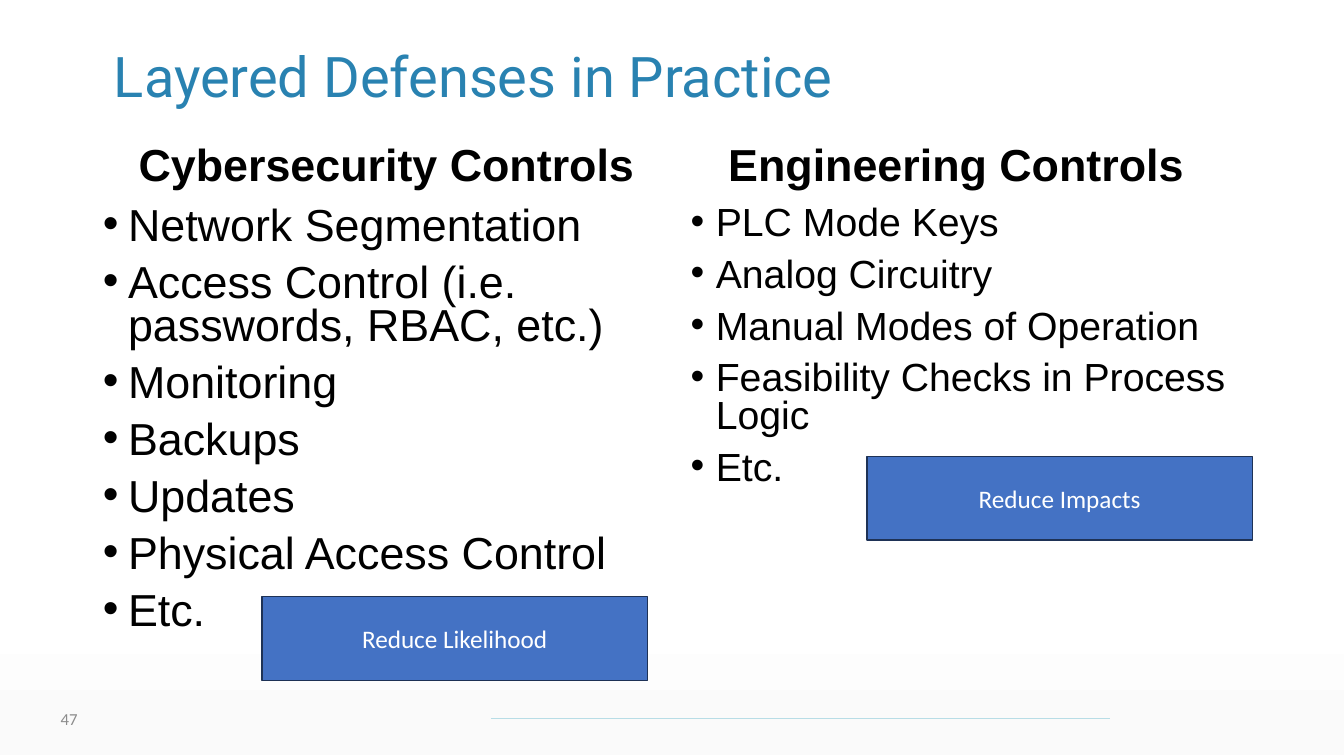
from dataclasses import dataclass

from lxml.etree import SubElement
from pptx import Presentation
from pptx.dml.color import RGBColor
from pptx.enum.shapes import MSO_CONNECTOR, MSO_SHAPE
from pptx.enum.text import MSO_ANCHOR, MSO_AUTO_SIZE, PP_ALIGN
from pptx.oxml.ns import qn
from pptx.slide import Slide
from pptx.text.text import TextFrame, _Paragraph as Paragraph
from pptx.util import Inches, Pt

BLACK = RGBColor(0x00, 0x00, 0x00)
WHITE = RGBColor(0xFF, 0xFF, 0xFF)
TEAL = RGBColor(0x29, 0x82, 0xB1)
PALE_TEAL = RGBColor(0xB8, 0xDD, 0xE6)
GRAY = RGBColor(0x8C, 0x8C, 0x8C)
BOX_BLUE = RGBColor(0x44, 0x72, 0xC4)
BOX_EDGE = RGBColor(0x1E, 0x32, 0x56)
PALE_GRAY = RGBColor(0xFA, 0xFA, 0xFA)

SLIDE_WIDTH, SLIDE_HEIGHT = 13.33, 7.5
COLUMN_WIDTH = 5.67


@dataclass(frozen=True)
class TextStyle:
    font: str
    size: float
    color: RGBColor
    bold: bool = False
    align: PP_ALIGN = PP_ALIGN.LEFT
    line_spacing: float = 1.0


@dataclass(frozen=True)
class ControlColumn:
    heading: str
    heading_left: float
    controls: tuple[str, ...]
    list_left: float
    list_size: float
    effect: str
    effect_left: float
    effect_top: float


TITLE_STYLE = TextStyle("Roboto", 40, TEAL, line_spacing=0.9)
HEADING_STYLE = TextStyle("Arial", 32, BLACK, True, PP_ALIGN.CENTER, 0.9)
EFFECT_STYLE = TextStyle("Calibri", 18, WHITE, align=PP_ALIGN.CENTER)
NUMBER_STYLE = TextStyle("Calibri", 12, GRAY, align=PP_ALIGN.RIGHT)

COLUMNS = (
    ControlColumn(
        "Cybersecurity Controls", 1.0,
        ("Network Segmentation", "Access Control (i.e. passwords, RBAC, etc.)",
         "Monitoring", "Backups", "Updates", "Physical Access Control", "Etc."),
        0.92, 32, "Reduce Likelihood", 2.6, 5.92),
    ControlColumn(
        "Engineering Controls", 6.65,
        ("PLC Mode Keys", "Analog Circuitry", "Manual Modes of Operation",
         "Feasibility Checks in Process Logic", "Etc."),
        6.75, 28, "Reduce Impacts", 8.6, 4.53),
)


def place(shape, left: float, top: float, width: float, height: float) -> None:
    shape.left, shape.top = Inches(left), Inches(top)
    shape.width, shape.height = Inches(width), Inches(height)


def style_paragraph(paragraph: Paragraph, style: TextStyle) -> None:
    paragraph.alignment = style.align
    paragraph.line_spacing = style.line_spacing
    font = paragraph.font
    font.name, font.size, font.bold = style.font, Pt(style.size), style.bold
    font.color.rgb = style.color


def write(frame: TextFrame, text: str, style: TextStyle,
          anchor: MSO_ANCHOR = MSO_ANCHOR.MIDDLE) -> None:
    frame.text = text
    frame.word_wrap = True
    frame.auto_size = MSO_AUTO_SIZE.NONE
    frame.vertical_anchor = anchor
    for paragraph in frame.paragraphs:
        style_paragraph(paragraph, style)


def add_label(slide: Slide, text: str, style: TextStyle, left: float, top: float,
              width: float, height: float, anchor: MSO_ANCHOR) -> None:
    label = slide.shapes.add_textbox(
        Inches(left), Inches(top), Inches(width), Inches(height))
    write(label.text_frame, text, style, anchor)


def add_backdrop(slide: Slide) -> None:
    """Put the shaded band and the footer rule behind everything else."""
    depth, center_y = 1.76, 6.615
    band = slide.shapes.add_shape(
        MSO_SHAPE.RECTANGLE,
        Inches((SLIDE_WIDTH - depth) / 2), Inches(center_y - SLIDE_WIDTH / 2),
        Inches(depth), Inches(SLIDE_WIDTH))
    band.rotation = 270
    band.shadow.inherit = False
    band.line.fill.background()
    band.fill.gradient()
    band.fill.gradient_angle = 0
    stops = ((0.16, PALE_GRAY), (0.78, WHITE))
    for stop, (position, color) in zip(band.fill.gradient_stops, reversed(stops)):
        stop.position = 1 - position
        stop.color.rgb = color
    band.fill.gradient_angle = 180

    rule = slide.shapes.add_connector(
        MSO_CONNECTOR.STRAIGHT,
        Inches(4.87), Inches(7.13), Inches(11.01), Inches(7.13))
    rule.line.color.rgb = PALE_TEAL
    rule.line.width = Pt(0.75)
    SubElement(rule.element.spPr, qn("a:effectLst"))

    first_shape = slide.shapes[0].element
    for backdrop_part in (band, rule):
        first_shape.addprevious(backdrop_part.element)


def fill_control_list(placeholder, column: ControlColumn) -> None:
    place(placeholder, column.list_left, 2, COLUMN_WIDTH, 4.76)
    style = TextStyle("Arial", column.list_size, BLACK, line_spacing=0.8)
    frame = placeholder.text_frame
    frame.text = "\n".join(column.controls)
    frame.word_wrap = True
    frame.auto_size = MSO_AUTO_SIZE.NONE
    frame.vertical_anchor = MSO_ANCHOR.TOP
    for index, paragraph in enumerate(frame.paragraphs):
        properties = paragraph._p.get_or_add_pPr()
        properties.set("marL", str(Inches(0.25)))
        properties.set("indent", str(Inches(-0.25)))
        SubElement(properties, qn("a:buFont")).set("typeface", "Arial")
        SubElement(properties, qn("a:buChar")).set("char", "•")
        style_paragraph(paragraph, style)
        paragraph.space_before = Pt(10 if index else 0)


def add_effect_box(slide: Slide, column: ControlColumn) -> None:
    box = slide.shapes.add_shape(
        MSO_SHAPE.RECTANGLE, Inches(column.effect_left), Inches(column.effect_top),
        Inches(3.82), Inches(0.83))
    box.shadow.inherit = False
    box.fill.solid()
    box.fill.fore_color.rgb = BOX_BLUE
    box.line.color.rgb = BOX_EDGE
    box.line.width = Pt(1)
    write(box.text_frame, column.effect, EFFECT_STYLE)


def main() -> None:
    deck = Presentation()
    deck.slide_width, deck.slide_height = Inches(SLIDE_WIDTH), Inches(SLIDE_HEIGHT)
    slide = deck.slides.add_slide(deck.slide_layouts.get_by_name("Two Content"))

    add_backdrop(slide)
    title, *control_lists = slide.placeholders
    place(title, 1.03, 0.4, 11.74, 0.77)
    write(title.text_frame, "Layered Defenses in Practice", TITLE_STYLE)

    for column, control_list in zip(COLUMNS, control_lists):
        fill_control_list(control_list, column)
        add_label(slide, column.heading, HEADING_STYLE,
                  column.heading_left, 1.37, COLUMN_WIDTH, 0.63, MSO_ANCHOR.TOP)
        add_effect_box(slide, column)
    add_label(slide, "47", NUMBER_STYLE, 0.23, 6.93, 0.64, 0.4, MSO_ANCHOR.MIDDLE)

    deck.save("out.pptx")


if __name__ == "__main__":
    main()
